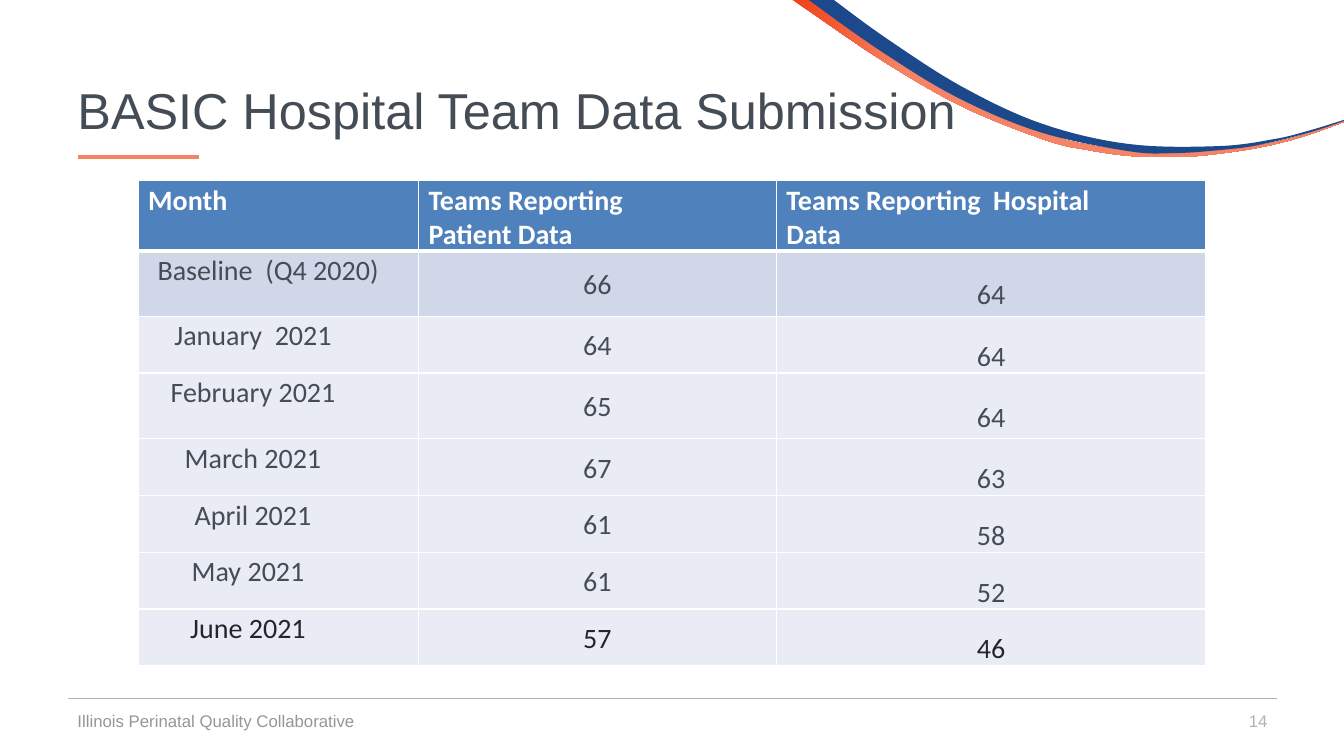
import pptx
import pptx.chart.data
import pptx.dml.color
import pptx.enum.shapes
import pptx.enum.text
import pptx.oxml
import pptx.oxml.ns
import pptx.util

Inches = pptx.util.Inches
Pt = pptx.util.Pt
RGB = pptx.dml.color.RGBColor
ALIGN = pptx.enum.text.PP_ALIGN
ANCHOR = pptx.enum.text.MSO_ANCHOR

WHITE = RGB(0xFF, 0xFF, 0xFF)
SLATE = RGB(0x44, 0x4C, 0x55)
INK = RGB(0x22, 0x26, 0x2A)
SILVER = RGB(0xAF, 0xB3, 0xB9)
GREY = RGB(0x94, 0x96, 0x99)
NAVY = RGB(0x1C, 0x49, 0x8B)
RED = RGB(0xF0, 0x41, 0x15)
CORAL = RGB(0xF5, 0x83, 0x66)
HEAD = RGB(0x4F, 0x81, 0xBC)
BAND = RGB(0xD0, 0xD7, 0xE8)
PALE = RGB(0xE9, 0xEC, 0xF4)

# Edges of the two ribbons, in inches from the swoosh's top left corner
CORAL_TOP = [(0.19, 0), (0.96, 0.54), (1.72, 0.99), (2.53, 1.33), (2.95, 1.44),
             (3.39, 1.5), (3.82, 1.52), (4.26, 1.49), (4.7, 1.43),
             (5.13, 1.32), (5.47, 1.2)]
CORAL_LOW = [(5.47, 1.21), (5.08, 1.35), (4.7, 1.45), (4.27, 1.52),
             (3.83, 1.56), (3.38, 1.55), (2.94, 1.49), (2.51, 1.39),
             (1.69, 1.06), (0.92, 0.62), (0.18, 0.12), (0, 0)]
NAVY_TOP = [(0.41, 0), (0.93, 0.38), (1.68, 0.86), (2.48, 1.23), (3.34, 1.43),
            (4.23, 1.45), (4.78, 1.38), (5.11, 1.3), (5.47, 1.19)]
NAVY_LOW = [(5.47, 1.2), (5.11, 1.32), (4.62, 1.44), (4.23, 1.49),
            (3.78, 1.52), (3.33, 1.5), (2.45, 1.31), (1.62, 0.96),
            (0.85, 0.49), (0.16, 0)]

COLS = [2.78, 3.55, 4.26]
ROWS = [0.65, 0.65, 0.53, 0.65, 0.48, 0.53, 0.53, 0.53]
DATA = [
    ("Month", "Teams Reporting  Patient Data", "Teams Reporting  Hospital Data"),
    ("Baseline  (Q4 2020)", "66", "64"),
    ("January  2021", "64", "64"),
    ("February 2021", "65", "64"),
    ("March 2021", "67", "63"),
    ("April 2021", "61", "58"),
    ("May 2021", "61", "52"),
    ("June 2021", "57", "46"),
]


def smooth(knots, steps=8):
    """Points of a Catmull-Rom curve through the knots."""
    ends = [knots[0], *knots, knots[-1]]
    curve = [knots[0]]
    for a, b, c, d in zip(ends, ends[1:], ends[2:], ends[3:]):
        for i in range(1, steps + 1):
            t = i / steps
            curve.append(tuple(
                (2 * q + (r - p) * t + (2 * p - 5 * q + 4 * r - s) * t ** 2
                 + (3 * q - p - 3 * r + s) * t ** 3) / 2
                for p, q, r, s in zip(a, b, c, d)))
    return curve


def ribbon(slide, left, top, upper, lower):
    dots = [(Inches(left + x), Inches(top + y))
            for x, y in smooth(upper) + smooth(lower)]
    pen = slide.shapes.build_freeform(*dots[0])
    pen.add_line_segments(dots[1:], close=True)
    shape = pen.convert_to_shape()
    shape.shadow.inherit = False
    shape.line.fill.background()
    return shape


def swoosh(slide, left, top):
    fill = ribbon(slide, left, top, CORAL_TOP, CORAL_LOW).fill
    fill.gradient()
    fill.gradient_angle = 0
    for stop, place, color in zip(fill.gradient_stops, (0, 0.2), (RED, CORAL)):
        stop.position = place
        stop.color.rgb = color
    fill = ribbon(slide, left, top, NAVY_TOP, NAVY_LOW).fill
    fill.solid()
    fill.fore_color.rgb = NAVY


def rule(slide, left, top, width, color, weight):
    line = slide.shapes.add_connector(
        pptx.enum.shapes.MSO_CONNECTOR.STRAIGHT,
        Inches(left), Inches(top), Inches(left + width), Inches(top))
    line.line.color.rgb = color
    line.line.width = Pt(weight)
    props = line._element.spPr
    props.append(props.makeelement(pptx.oxml.ns.qn("a:effectLst"), {}))


def style(para, name, size, color, align, bold=False):
    para.alignment = align
    font = para.font
    font.name, font.size, font.bold = name, Pt(size), bold
    font.color.rgb = color


def label(slide, box, text, size, color, align=ALIGN.LEFT):
    frame = slide.shapes.add_textbox(*map(Inches, box)).text_frame
    frame.word_wrap = True
    frame.vertical_anchor = ANCHOR.MIDDLE
    frame.text = text
    style(frame.paragraphs[0], "Arial", size, color, align)
    return frame.paragraphs[0]


def title(slide, left, top, width, height):
    para = label(slide, (left, top, width, height),
                 "BASIC Hospital Team Data Submission", 36, SLATE)
    para.line_spacing = 0.9
    rule(slide, left + 0.1, top + 1.16, 1.2, CORAL, 2.5)


def footer(slide, left, top, width):
    rule(slide, left, top, width, SILVER, 0.5)
    label(slide, (left, top + 0.02, 4.5, 0.4),
          "Illinois Perinatal Quality Collaborative", 12, GREY)
    label(slide, (left + width - 3, top + 0.02, 3, 0.4), "14", 12, SILVER,
          ALIGN.RIGHT)


def border(cell, row):
    props = cell._tc.get_or_add_tcPr()
    for side in "LRTB":
        thick = (side, row) in (("B", 0), ("T", 1))
        props.append(pptx.oxml.parse_xml(
            f'<a:ln{side} {pptx.oxml.ns.nsdecls("a")} w="{Pt(3 if thick else 1)}">'
            f'<a:solidFill><a:srgbClr val="{WHITE}"/></a:solidFill></a:ln{side}>'))


def indent(para, left, right):
    props = para._p.get_or_add_pPr()
    props.set("marL", str(Inches(left)))
    props.set("marR", str(Inches(right)))


def fill_cell(cell, row, col, text):
    border(cell, row)
    cell.fill.solid()
    cell.fill.fore_color.rgb = {0: HEAD, 1: BAND}.get(row, PALE)
    cell.margin_left = cell.margin_right = cell.margin_bottom = 0
    cell.margin_top = Inches(0.23 if row and col == 2 else 0.03)
    cell.text = text
    para = cell.text_frame.paragraphs[0]
    if row == 0:
        indent(para, 0.1, 1)
        style(para, "Calibri", 20, WHITE, ALIGN.LEFT, True)
        return
    if col == 0:
        indent(para, 0.1 if row < 6 else 0, 0.3 if row == 1 else 0.6)
    else:
        cell.vertical_anchor = ANCHOR.MIDDLE
    last = row == len(DATA) - 1
    style(para, "Calibri", 20, INK if last else SLATE, ALIGN.CENTER)


def report(slide, left, top):
    """Table of teams reporting by month."""
    table = slide.shapes.add_table(
        len(ROWS), len(COLS), Inches(left), Inches(top),
        Inches(sum(COLS)), Inches(sum(ROWS))).table
    table.first_row = table.horz_banding = False
    for column, width in zip(table.columns, COLS):
        column.width = Inches(width)
    for row, (height, texts) in enumerate(zip(ROWS, DATA)):
        table.rows[row].height = Inches(height)
        for col, text in enumerate(texts):
            fill_cell(table.cell(row, col), row, col, text)


def main():
    deck = pptx.Presentation()
    deck.slide_width, deck.slide_height = Inches(13.33), Inches(7.5)
    slide = deck.slides.add_slide(deck.slide_layouts[6])
    swoosh(slide, 7.86, 0)
    title(slide, 0.67, 0.4, 12, 1.45)
    footer(slide, 0.67, 6.93, 12)
    report(slide, 1.37, 1.79)
    deck.save("out.pptx")


if __name__ == "__main__":
    main()
